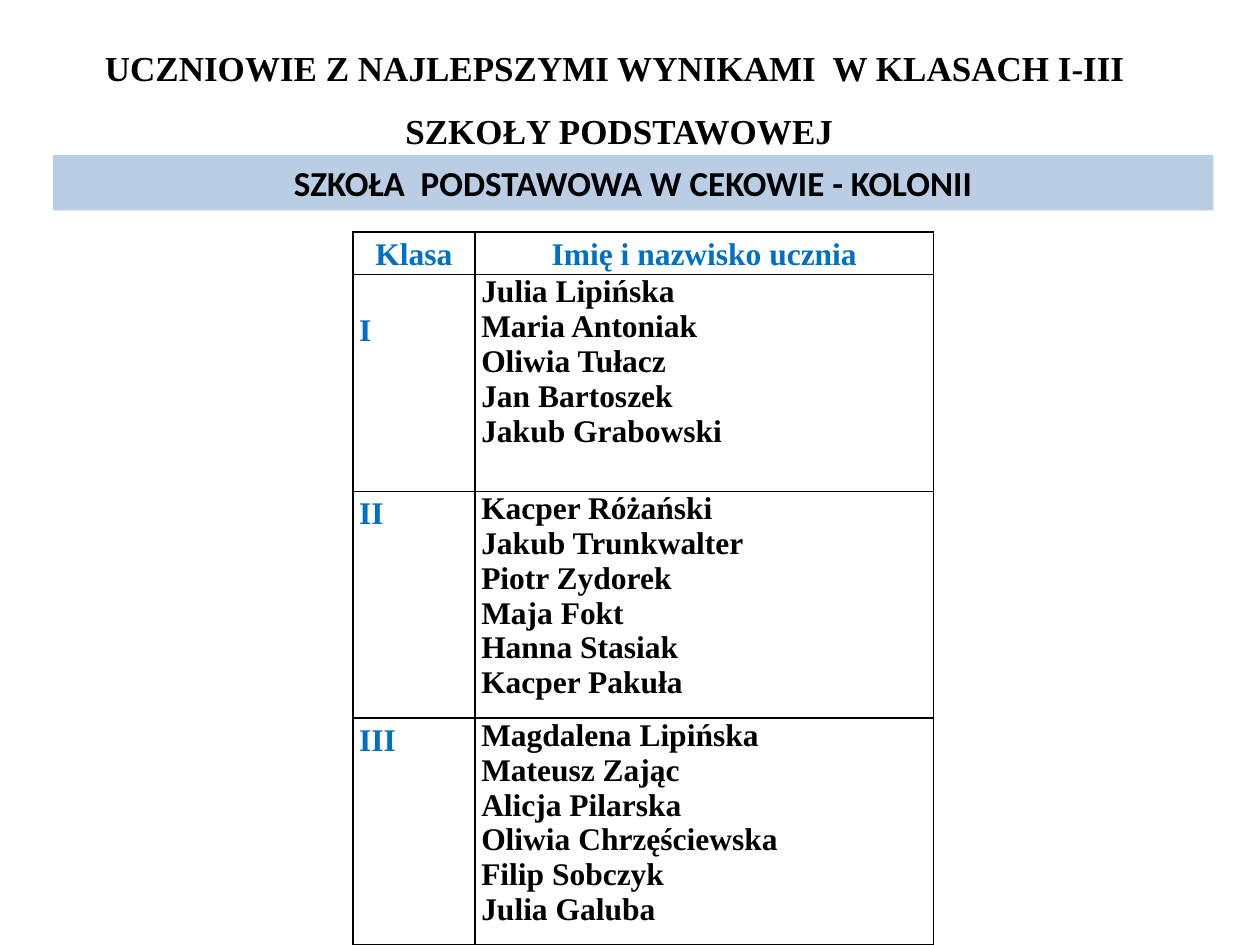
from lxml import etree
from pptx import Presentation
from pptx.dml.color import RGBColor
from pptx.enum.shapes import MSO_SHAPE
from pptx.enum.text import MSO_ANCHOR, MSO_AUTO_SIZE, PP_ALIGN
from pptx.oxml.ns import qn
from pptx.util import Inches, Pt

CENTER, LEFT = PP_ALIGN.CENTER, PP_ALIGN.LEFT
TOP, MIDDLE = MSO_ANCHOR.TOP, MSO_ANCHOR.MIDDLE
NO_AUTOFIT = MSO_AUTO_SIZE.NONE
RECTANGLE = MSO_SHAPE.RECTANGLE
TITLE_ONLY = 5

SERIF, SANS = "Times New Roman", "Calibri"
BLACK, BLUE, PALE_BLUE = "000000", "0070C0", "B9CDE5"

HEADINGS = ("Klasa", "Imię i nazwisko ucznia")
CLASSES = (
    ("I", ("Julia Lipińska", "Maria Antoniak", "Oliwia Tułacz\u00a0",
           "Jan Bartoszek", "Jakub Grabowski")),
    ("II", ("Kacper Różański", "Jakub Trunkwalter", "Piotr Zydorek",
            "Maja Fokt", "Hanna Stasiak", "Kacper Pakuła")),
    ("III", ("Magdalena Lipińska", "Mateusz Zając", "Alicja Pilarska",
             "Oliwia Chrzęściewska", "Filip Sobczyk", "Julia Galuba")),
)
COLUMN_WIDTHS = (0.97, 3.64)
ROW_HEIGHTS = (0.34, 1.72, 1.8, 1.8)


def rgb(value):
    """Turn a hex string into a colour."""
    return RGBColor.from_string(value)


def write(frame, text, font, size, color, align, spacing=1.0):
    """Fill a text frame and give every run the same bold format."""
    frame.text = text
    for paragraph in frame.paragraphs:
        paragraph.alignment = align
        paragraph.line_spacing = spacing
        for run in paragraph.runs:
            run.font.name = font
            run.font.size = Pt(size)
            run.font.bold = True
            run.font.color.rgb = rgb(color)


def set_borders(cell, color, points):
    """Draw a solid line on all four sides of a cell."""
    properties = cell._tc.get_or_add_tcPr()
    for side in ("a:lnL", "a:lnR", "a:lnT", "a:lnB"):
        line = etree.SubElement(properties, qn(side), w=str(Pt(points)))
        fill = etree.SubElement(line, qn("a:solidFill"))
        etree.SubElement(fill, qn("a:srgbClr"), val=color)


def fill_cell(cell, text, color, align=LEFT, spacing=1.0):
    """Write and format one table cell."""
    cell.margin_left = cell.margin_right = Inches(0.05)
    cell.margin_top = cell.margin_bottom = 0
    set_borders(cell, BLACK, 1)
    cell.fill.background()
    write(cell.text_frame, text, SERIF, 18, color, align, spacing)


def place_title(slide, left, top, width, height):
    """Place the two-line heading in the title placeholder."""
    title = slide.shapes.title
    title.left, title.top, title.width, title.height = left, top, width, height
    frame = title.text_frame
    write(frame, "UCZNIOWIE Z NAJLEPSZYMI WYNIKAMI  W KLASACH I-III \vSZKOŁY PODSTAWOWEJ",
          SERIF, 20, BLACK, CENTER, 1.5)
    frame.word_wrap = True
    frame.auto_size = NO_AUTOFIT
    frame.vertical_anchor = TOP


def place_school_band(slide, left, top, width, height):
    """Place the coloured band with the school name."""
    band = slide.shapes.add_shape(RECTANGLE, left, top, width, height)
    band.shadow.inherit = False
    band.fill.solid()
    band.fill.fore_color.rgb = rgb(PALE_BLUE)
    band.line.fill.background()
    write(band.text_frame, "SZKOŁA  PODSTAWOWA W CEKOWIE - KOLONII",
          SANS, 20, BLACK, CENTER)
    band.text_frame.vertical_anchor = MIDDLE


def place_pupil_table(slide, left, top, width, height):
    """Place the table of classes and their best pupils."""
    table = slide.shapes.add_table(len(ROW_HEIGHTS), len(COLUMN_WIDTHS),
                                   left, top, width, height).table
    for column, column_width in zip(table.columns, COLUMN_WIDTHS):
        column.width = Inches(column_width)
    for row, row_height in zip(table.rows, ROW_HEIGHTS):
        row.height = Inches(row_height)
    for index, heading in enumerate(HEADINGS):
        fill_cell(table.cell(0, index), heading, BLUE, CENTER, 1.15)
    for index, (class_name, pupils) in enumerate(CLASSES, start=1):
        fill_cell(table.cell(index, 0), class_name, BLUE, spacing=1.15)
        fill_cell(table.cell(index, 1), "\n".join(pupils), BLACK)
    table.cell(1, 0).margin_top = Inches(0.27)


def main():
    """Build the slide and save it."""
    presentation = Presentation()
    presentation.slide_width, presentation.slide_height = Inches(10), Inches(7.5)
    slide = presentation.slides.add_slide(presentation.slide_layouts[TITLE_ONLY])
    place_title(slide, Inches(0.31), Inches(0.15), Inches(9.21), Inches(1.05))
    place_school_band(slide, Inches(0.42), Inches(1.23), Inches(9.21), Inches(0.44))
    place_pupil_table(slide, Inches(2.8), Inches(1.84),
                      Inches(sum(COLUMN_WIDTHS)), Inches(sum(ROW_HEIGHTS)))
    presentation.save("out.pptx")


if __name__ == "__main__":
    main()
